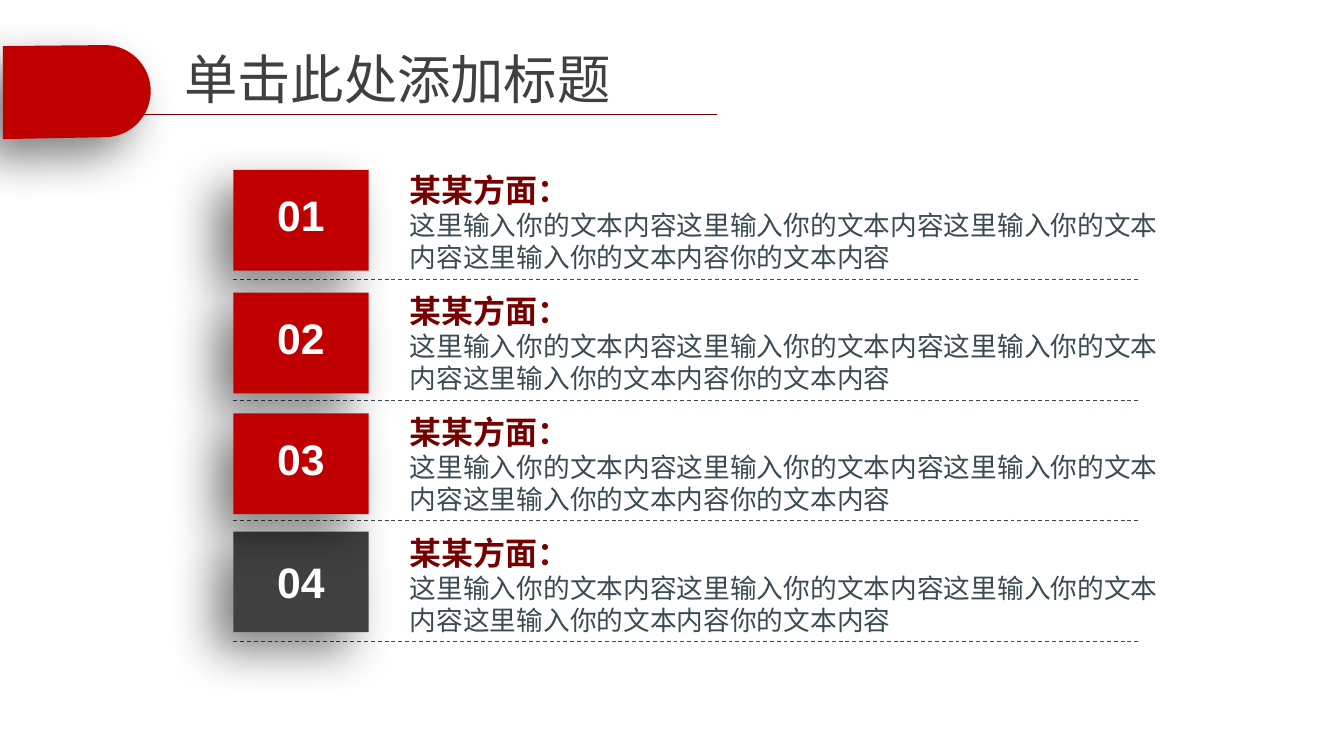
from math import cos, radians, sin

from lxml import etree
from pptx import Presentation
from pptx.dml.color import RGBColor
from pptx.enum.dml import MSO_LINE
from pptx.enum.shapes import MSO_CONNECTOR, MSO_SHAPE
from pptx.enum.text import MSO_ANCHOR, PP_ALIGN
from pptx.oxml import parse_xml
from pptx.oxml.ns import nsdecls, qn
from pptx.util import Inches, Pt

RED = RGBColor(0xC0, 0x00, 0x00)
DARK_RED = RGBColor(0x76, 0x00, 0x00)
GREY = RGBColor(0x40, 0x40, 0x40)
SLATE = RGBColor(0x39, 0x4C, 0x53)
WHITE = RGBColor(0xFF, 0xFF, 0xFF)
CJK_FONT = "Noto Sans CJK SC"

HEADING = "某某方面："
BODY = "这里输入你的文本内容" * 4 + "你的文本内容"

SHADOW = (
    f'<a:effectLst {nsdecls("a")}>'
    f'<a:outerShdw blurRad="{Pt(35)}" dist="{Pt(20)}" dir="{135 * 60000}" algn="ctr" rotWithShape="0">'
    '<a:srgbClr val="000000"><a:alpha val="50000"/></a:srgbClr>'
    "</a:outerShdw></a:effectLst>"
)


def write(paragraph, text, font_name, size, color, bold=False):
    run = paragraph.add_run()
    run.text = text
    values = {"name": font_name, "size": Pt(size), "bold": bold}
    for name, value in values.items():
        setattr(run.font, name, value)
    run.font.color.rgb = color
    east_asian = etree.SubElement(run.font._element, qn("a:ea"))
    east_asian.set("typeface", CJK_FONT)


def paint(shape, color):
    shape.fill.solid()
    shape.fill.fore_color.rgb = color
    shape.line.fill.background()
    shape._element.spPr.append(parse_xml(SHADOW))


presentation = Presentation()
presentation.slide_width = Inches(14)
presentation.slide_height = Inches(7.88)
slide = presentation.slides.add_slide(presentation.slide_layouts[5])
shapes = slide.shapes

# Lines: the title rule, then a dashed one under each row
row_tops = [1.73 + 1.26 * row for row in range(4)]
rules = [(0.92, 7.47, 1.19, DARK_RED, None)]
rules += [(2.43, 11.88, top + 1.18, SLATE, MSO_LINE.DASH) for top in row_tops]
for left, right, y, color, dash in rules:
    rule = shapes.add_connector(
        MSO_CONNECTOR.STRAIGHT, Inches(left), Inches(y), Inches(right), Inches(y))
    rule.line.color.rgb = color
    rule.line.width = Pt(0.75)
    rule.line.dash_style = dash
    etree.SubElement(rule._element.spPr, qn("a:effectLst"))

# Red tab with a round right end
arc = [(1.09 + 0.48 * cos(radians(angle)), 0.95 + 0.48 * sin(radians(angle)))
       for angle in range(-90, 91, 3)]
outline = [(Inches(x), Inches(y)) for x, y in arc + [(0.03, 1.45)]]
builder = shapes.build_freeform(Inches(0.03), Inches(0.48))
builder.add_line_segments(outline, close=True)
paint(builder.convert_to_shape(), RED)

# Heading and body text of each row
for top in row_tops:
    text_box = shapes.add_textbox(Inches(4.17), Inches(top), Inches(8.11), Inches(1.18))
    frame = text_box.text_frame
    frame.word_wrap = True
    heading = frame.paragraphs[0]
    heading.line_spacing = Pt(29)
    write(heading, HEADING, CJK_FONT, 24, DARK_RED, bold=True)
    body = frame.add_paragraph()
    body.line_spacing = Pt(24)
    write(body, BODY, CJK_FONT, 20, SLATE)

# Number tiles: the grey one lies beneath the shadow of the third
tiles = [("04", 5.54, GREY), ("01", 1.77, RED), ("02", 3.05, RED), ("03", 4.31, RED)]
for number, top, color in tiles:
    grouped = color == RED
    parent = shapes.add_group_shape().shapes if grouped else shapes
    tile = parent.add_shape(
        MSO_SHAPE.RECTANGLE, Inches(2.43), Inches(top), Inches(1.41), Inches(1.05))
    paint(tile, color)
    label = tile
    if grouped:
        label = parent.add_textbox(
            Inches(2.58), Inches(top + 0.09), Inches(1.11), Inches(0.75))
    frame = label.text_frame
    frame.word_wrap = True
    frame.vertical_anchor = MSO_ANCHOR.MIDDLE
    frame.paragraphs[0].alignment = PP_ALIGN.CENTER
    write(frame.paragraphs[0], number, "Arial", 32, WHITE, bold=True)

# Title
title = shapes.title
place = {"left": 1.8, "top": 0.32, "width": 9.47, "height": 0.99}
for name, value in place.items():
    setattr(title, name, Inches(value))
frame = title.text_frame
margins = {"margin_left": 0.12, "margin_top": 0.06, "margin_right": 0.12, "margin_bottom": 0.06}
for name, value in margins.items():
    setattr(frame, name, Inches(value))
frame.vertical_anchor = MSO_ANCHOR.MIDDLE
frame.paragraphs[0].alignment = PP_ALIGN.LEFT
write(frame.paragraphs[0], "单击此处添加标题", "Arial", 40, GREY)

presentation.save("out.pptx")
